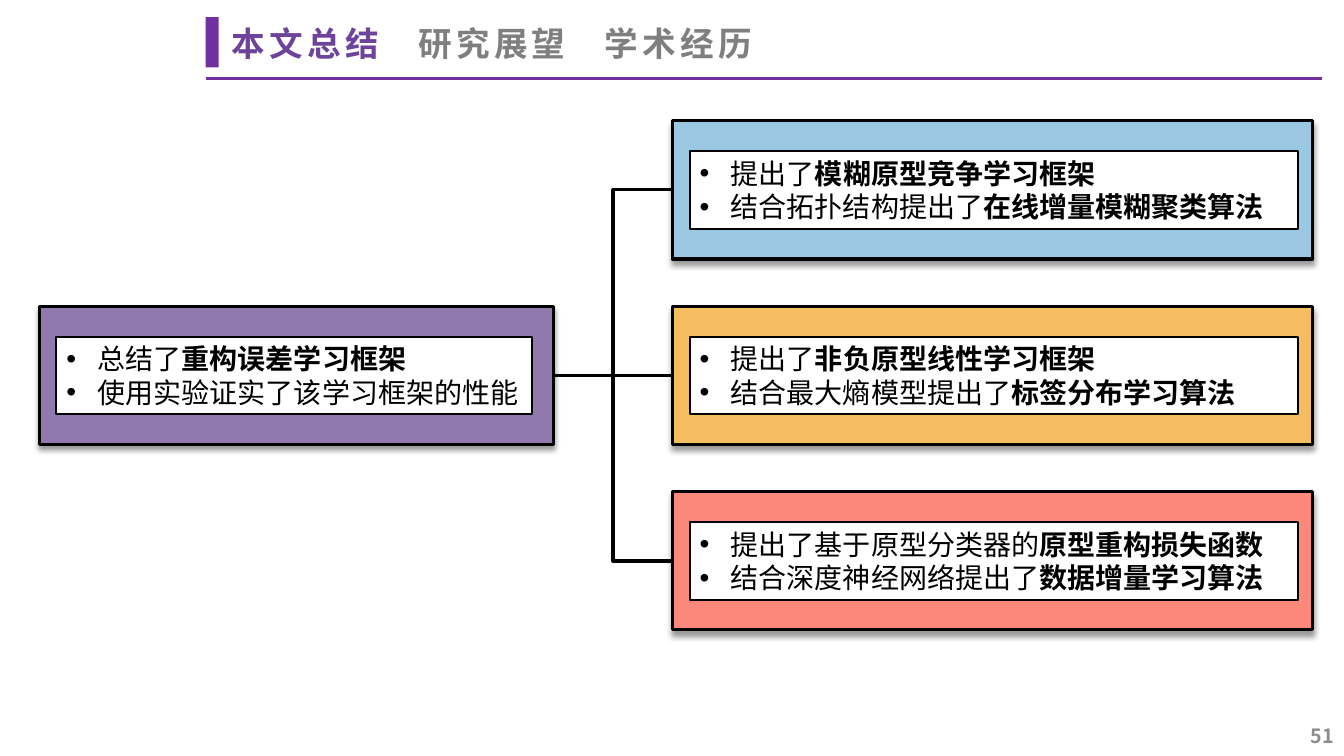
from lxml.etree import SubElement
from pptx import Presentation
from pptx.dml.color import RGBColor
from pptx.enum.shapes import MSO_CONNECTOR as CONN, MSO_SHAPE as SHAPE
from pptx.enum.text import MSO_ANCHOR as ANCHOR, MSO_AUTO_SIZE as AUTO, PP_ALIGN as ALIGN
from pptx.oxml.ns import qn
from pptx.util import Inches, Pt

FONT = "Noto Sans CJK SC"
PURPLE, BLACK, WHITE = "7030A0", "000000", "FFFFFF"
SECTIONS = [("本文总结", "6D439B"), ("研究展望", "7F7F7F"), ("学术经历", "7F7F7F")]
PAGE = "51"
SUMMARY = ("9079AD", [("总结了", "重构误差学习框架"), ("使用实验证实了该学习框架的性能", "")])
RESULTS = [
    ("9AC8E2", [("提出了", "模糊原型竞争学习框架"),
                ("结合拓扑结构提出了", "在线增量模糊聚类算法")]),
    ("F6BD60", [("提出了", "非负原型线性学习框架"),
                ("结合最大熵模型提出了", "标签分布学习算法")]),
    ("FA897B", [("提出了基于原型分类器的", "原型重构损失函数"),
                ("结合深度神经网络提出了", "数据增量学习算法")]),
]
TOP, PITCH, CARD_H, LIST_H = 1.2, 1.84, 1.37, 0.77


def rgb(value):
    return RGBColor.from_string(value)


def add_run(p, text, size, color, bold=False):
    r = p.add_run()
    r.text = text
    r.font.size, r.font.bold, r.font.name = Pt(size), bold, FONT
    r.font.color.rgb = rgb(color)
    SubElement(r.font._element, qn("a:ea"), typeface=FONT)
    return r


def add_rect(s, x, y, w, h, fill, line=None):
    sp = s.shapes.add_shape(SHAPE.RECTANGLE, Inches(x), Inches(y), Inches(w), Inches(h))
    sp.shadow.inherit = False
    sp.fill.solid()
    sp.fill.fore_color.rgb = rgb(fill)
    if line:
        sp.line.color.rgb, sp.line.width = rgb(BLACK), Pt(line)
    else:
        sp.line.fill.background()
    return sp


def add_line(s, kind, x1, y1, x2, y2, color):
    c = s.shapes.add_connector(kind, Inches(x1), Inches(y1), Inches(x2), Inches(y2))
    c.line.color.rgb, c.line.width = rgb(color), Pt(2.25)
    SubElement(c._element.spPr, qn("a:effectLst"))
    return c


def add_shadow(sp):
    effects = sp._element.spPr.find(qn("a:effectLst"))
    shadow = SubElement(effects, qn("a:outerShdw"), blurRad=str(Pt(4)), dist=str(Pt(3)),
                        dir="5400000", rotWithShape="0")
    color = SubElement(shadow, qn("a:srgbClr"), val=BLACK)
    SubElement(color, qn("a:alpha"), val="40000")


def add_card(s, x, y, w, list_w, fill, items):
    card = add_rect(s, x, y, w, CARD_H, fill, 2.25)
    add_shadow(card)
    box = add_rect(s, x + 0.17, y + (CARD_H - LIST_H) / 2, list_w, LIST_H, WHITE, 1.5)
    tf = box.text_frame
    tf.word_wrap, tf.vertical_anchor = True, ANCHOR.TOP
    tf.margin_top, tf.margin_bottom = Inches(0.05), Inches(0.05)
    for i, (plain, strong) in enumerate(items):
        p = tf.add_paragraph() if i else tf.paragraphs[0]
        p.alignment, p.line_spacing = ALIGN.LEFT, Pt(24)
        pPr = p._p.get_or_add_pPr()
        pPr.set("marL", str(Inches(0.31)))
        pPr.set("indent", str(-Inches(0.31)))
        SubElement(pPr, qn("a:buFont"), typeface="Arial")
        SubElement(pPr, qn("a:buChar"), char="•")
        add_run(p, plain, 20, BLACK)
        if strong:
            add_run(p, strong, 20, BLACK, True)
    return card


def add_header(s):
    add_line(s, CONN.STRAIGHT, 2.04, 0.78, 13.11, 0.78, PURPLE)
    add_rect(s, 2.04, 0.17, 0.13, 0.5, PURPLE)
    title = s.shapes.title
    title.left, title.top, title.width, title.height = map(Inches, (2.2, 0.21, 11.03, 0.49))
    tf = title.text_frame
    tf.auto_size, tf.vertical_anchor = AUTO.NONE, ANCHOR.MIDDLE
    p = tf.paragraphs[0]
    p.alignment, p.line_spacing = ALIGN.LEFT, 0.9
    tabs = SubElement(p._p.get_or_add_pPr(), qn("a:tabLst"))
    for i, (name, color) in enumerate(SECTIONS):
        if i:
            SubElement(tabs, qn("a:tab"), pos=str(Inches(1.85 * i)), algn="l")
        r = add_run(p, "\t" + name if i else name, 24, color, True)
        r.font._element.set("spc", "300")


def add_page_number(s):
    tf = s.shapes.add_textbox(Inches(10.33), Inches(7.1), Inches(3), Inches(0.4)).text_frame
    tf.word_wrap, tf.vertical_anchor = True, ANCHOR.MIDDLE
    p = tf.paragraphs[0]
    p.alignment = ALIGN.RIGHT
    add_run(p, PAGE, 14, "8C8C8C", True)


def main():
    prs = Presentation()
    prs.slide_width, prs.slide_height = Inches(13.33), Inches(7.5)
    s = prs.slides.add_slide(prs.slide_layouts[5])
    add_header(s)
    add_page_number(s)
    hub = add_card(s, 0.39, TOP + PITCH, 5.1, 4.72, *SUMMARY)
    cards = [add_card(s, 6.67, TOP + PITCH * i, 6.35, 6.03, *result)
             for i, result in enumerate(RESULTS)]
    middle = TOP + PITCH + CARD_H / 2
    for i, card in enumerate(cards):
        c = add_line(s, CONN.ELBOW, 5.49, middle, 6.67, TOP + PITCH * i + CARD_H / 2, BLACK)
        c.begin_connect(hub, 3)
        c.end_connect(card, 1)
    prs.save("out.pptx")


if __name__ == "__main__":
    main()
